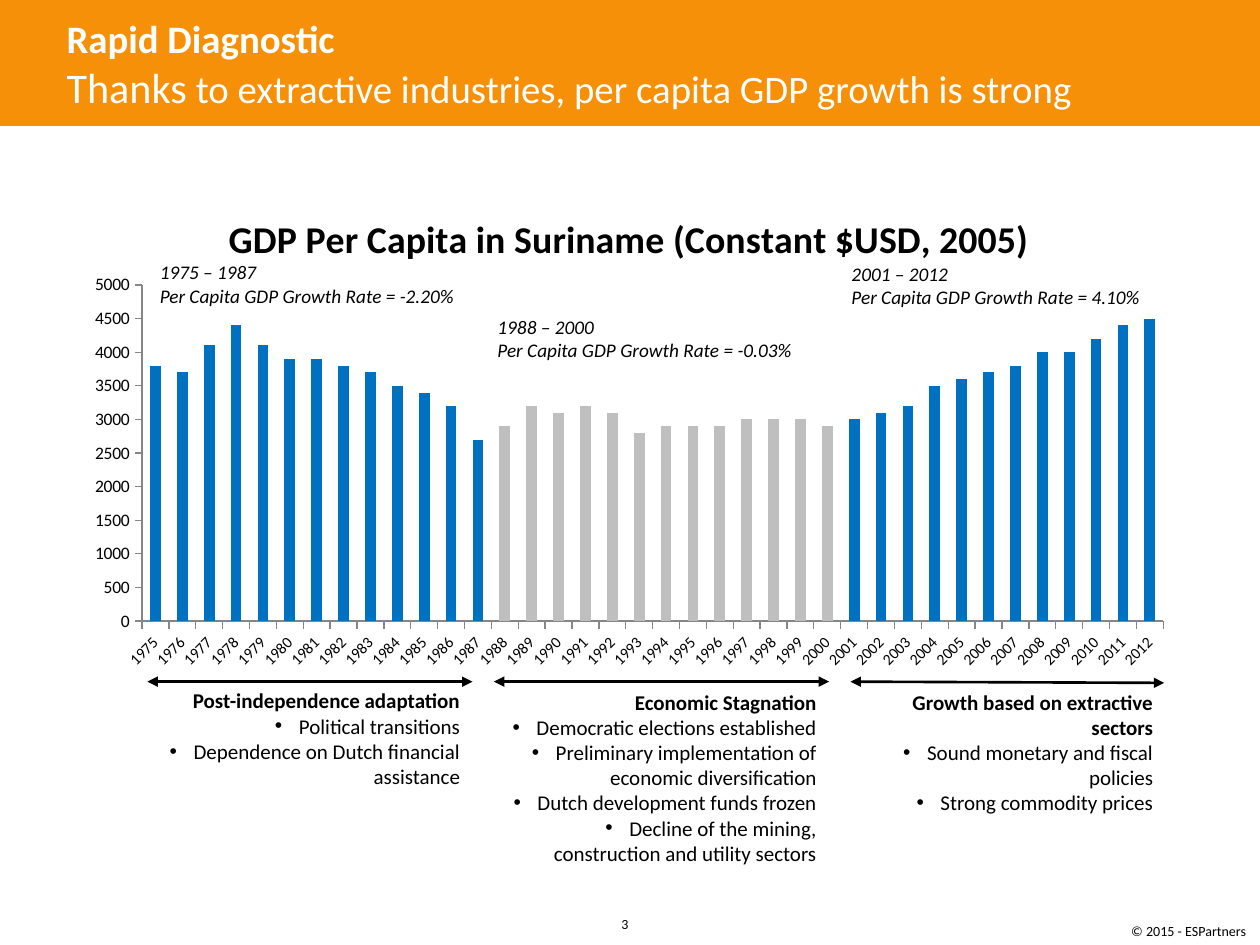
import pptx
import pptx.chart.data
import pptx.dml.color
import pptx.enum.chart
import pptx.enum.shapes
import pptx.enum.text
import pptx.oxml
import pptx.oxml.ns
import pptx.util
from dataclasses import dataclass
from pptx.util import Inches


@dataclass(frozen=True)
class Theme:
    face: str = "Calibri"
    band: str = "F69008"
    white: str = "FFFFFF"
    ink: str = "000000"
    blue: str = "0070C0"
    gray: str = "BFBFBF"
    base: str = "838D9B"
    axis: str = "868686"
    lead: float = 24.1
    head: float = 22.2
    title: float = 21.6
    body: float = 12
    rate: float = 11
    scale: float = 10
    year: float = 9
    small: float = 8


THEME = Theme()
ALIGN = pptx.enum.text.PP_ALIGN
FIRST = 1975
VALUES = [
    3800, 3700, 4100, 4400, 4100, 3900, 3900, 3800, 3700, 3500,
    3400, 3200, 2700, 2900, 3200, 3100, 3200, 3100, 2800, 2900,
    2900, 2900, 3000, 3000, 3000, 2900, 3000, 3100, 3200, 3500,
    3600, 3700, 3800, 4000, 4000, 4200, 4400, 4500,
]
ERAS = [
    dict(
        span=(1975, 1987), rate="-2.20%", note=(1.17, 2.02),
        line=(1.17, 5.41, 3.75, 5.41), box=(1.17, 5.41, 2.58, 0.91),
        head="Post-independence adaptation", color=THEME.blue,
        items=["Political transitions",
               "Dependence on Dutch financial assistance"],
    ),
    dict(
        span=(1988, 2000), rate="-0.03%", note=(3.85, 2.45),
        line=(3.92, 5.41, 6.58, 5.41), box=(3.83, 5.42, 2.75, 1.51),
        head="Economic Stagnation", color=THEME.gray,
        items=["Democratic elections established",
               "Preliminary implementation of economic diversification",
               "Dutch development funds frozen",
               "Decline of the mining, construction and utility sectors"],
    ),
    dict(
        span=(2001, 2012), rate="4.10%", note=(6.66, 2.03),
        line=(6.75, 5.41, 9.24, 5.42), box=(6.83, 5.42, 2.42, 1.31),
        head="Growth based on extractive sectors", color=THEME.blue,
        items=["Sound monetary and fiscal policies",
               "Strong commodity prices"],
    ),
]


def tint(color):
    return pptx.dml.color.RGBColor.from_string(color)


def style(font, size, color=THEME.ink, bold=False, italic=False):
    font.name = THEME.face
    font.size = pptx.util.Pt(size)
    font.color.rgb = tint(color)
    font.bold = bold
    font.italic = italic


def node(parent, tag, **attrs):
    item = pptx.oxml.parse_xml(f"<{tag} {pptx.oxml.ns.nsdecls(tag[0])}/>")
    for name, value in attrs.items():
        item.set(name, str(value))
    parent.append(item)
    return item


def write(para, text, align=ALIGN.LEFT, bullet=False, **look):
    para.alignment = align
    if bullet:
        props = para._p.get_or_add_pPr()
        props.set("marL", str(Inches(0.19)))
        props.set("indent", str(-Inches(0.19)))
        node(props, "a:buFont", typeface="Arial")
        node(props, "a:buChar", char="•")
    run = para.add_run()
    run.text = text
    style(run.font, **look)


def frame(slide, box, wrap=True):
    body = slide.shapes.add_textbox(*map(Inches, box)).text_frame
    body.word_wrap = wrap
    return body


def arrow(slide, ends):
    line = slide.shapes.add_connector(
        pptx.enum.shapes.MSO_CONNECTOR.STRAIGHT, *map(Inches, ends))
    line.line.color.rgb = tint(THEME.ink)
    line.line.width = pptx.util.Pt(1.5)
    edge = line.line._get_or_add_ln()
    node(edge, "a:headEnd", type="triangle")
    node(edge, "a:tailEnd", type="triangle")
    node(line._element.spPr, "a:effectLst")


def header(slide):
    band = slide.shapes.add_shape(
        pptx.enum.shapes.MSO_SHAPE.RECTANGLE, 0, 0, Inches(10), Inches(1))
    band.shadow.inherit = False
    band.fill.solid()
    band.fill.fore_color.rgb = tint(THEME.band)
    band.line.fill.background()
    body = frame(slide, (0.43, 0, 8.32, 1))
    body.vertical_anchor = pptx.enum.text.MSO_ANCHOR.MIDDLE
    write(body.paragraphs[0], "Rapid Diagnostic",
          size=THEME.head, color=THEME.white, bold=True)
    para = body.add_paragraph()
    write(para, "Thanks", size=THEME.lead, color=THEME.white)
    write(para, " to extractive industries, per capita GDP growth is strong",
          size=THEME.head, color=THEME.white)


def place(chart):
    plot = chart._chartSpace.chart.plotArea
    for old in plot.findall(pptx.oxml.ns.qn("c:layout")):
        plot.remove(old)
    layout = node(plot, "c:layout")
    plot.insert(0, layout)
    manual = node(layout, "c:manualLayout")
    for tag, value in (("layoutTarget", "inner"), ("xMode", "edge"),
                       ("yMode", "edge"), ("x", 0.062), ("y", 0.196),
                       ("w", 0.918), ("h", 0.686)):
        node(manual, f"c:{tag}", val=value)


def graph(slide):
    data = pptx.chart.data.CategoryChartData()
    data.categories = [str(FIRST + step) for step in range(len(VALUES))]
    data.add_series("Series 1", VALUES)
    kind = pptx.enum.chart.XL_CHART_TYPE.COLUMN_CLUSTERED
    box = map(Inches, (0.58, 1.5, 8.83, 3.89))
    chart = slide.shapes.add_chart(kind, *box, data).chart
    style(chart.font, THEME.scale)
    chart.has_legend = False
    chart.has_title = True
    write(chart.chart_title.text_frame.paragraphs[0],
          "GDP Per Capita in Suriname (Constant $USD, 2005)",
          align=ALIGN.CENTER, size=THEME.title, bold=True)
    chart.chart_title.include_in_layout = False
    for axis, size in ((chart.category_axis, THEME.year),
                       (chart.value_axis, THEME.scale)):
        axis.has_major_gridlines = False
        axis.major_tick_mark = pptx.enum.chart.XL_TICK_MARK.OUTSIDE
        axis.format.line.color.rgb = tint(THEME.axis)
        style(axis.tick_labels.font, size)
    turn = chart.category_axis._element.find(
        pptx.oxml.ns.qn("c:txPr")).find(pptx.oxml.ns.qn("a:bodyPr"))
    turn.set("rot", "-2700000")
    chart.value_axis.minimum_scale = 0
    chart.value_axis.maximum_scale = 5000
    chart.value_axis.major_unit = 500
    plot = chart.plots[0]
    plot.gap_width = 150
    plot.vary_by_categories = False
    bars = plot.series[0]
    bars.format.fill.solid()
    bars.format.fill.fore_color.rgb = tint(THEME.base)
    for era in ERAS:
        start, end = era["span"]
        for year in range(start, end + 1):
            fill = bars.points[year - FIRST].format.fill
            fill.solid()
            fill.fore_color.rgb = tint(era["color"])
    place(chart)


def period(slide, era):
    arrow(slide, era["line"])
    body = frame(slide, era["box"])
    write(body.paragraphs[0], era["head"], align=ALIGN.RIGHT,
          size=THEME.body, bold=True)
    for item in era["items"]:
        write(body.add_paragraph(), item, align=ALIGN.RIGHT, bullet=True,
              size=THEME.body)
    note = frame(slide, (*era["note"], 2.67, 0.47))
    start, end = era["span"]
    write(note.paragraphs[0], f"{start} – {end}", size=THEME.rate, italic=True)
    write(note.add_paragraph(), f"Per Capita GDP Growth Rate = {era['rate']}",
          size=THEME.rate, italic=True)


def main():
    deck = pptx.Presentation()
    deck.slide_width, deck.slide_height = Inches(10), Inches(7.5)
    slide = deck.slides.add_slide(deck.slide_layouts[6])
    credit = frame(slide, (8.88, 7.27, 1.14, 0.24), wrap=False)
    write(credit.paragraphs[0], "© 2015 - ESPartners", size=THEME.small)
    header(slide)
    graph(slide)
    for era in ERAS:
        period(slide, era)
    number = frame(slide, (4.75, 7.22, 0.42, 0.2))
    write(number.paragraphs[0], "3", align=ALIGN.CENTER, size=THEME.small)
    deck.save("out.pptx")


if __name__ == "__main__":
    main()
